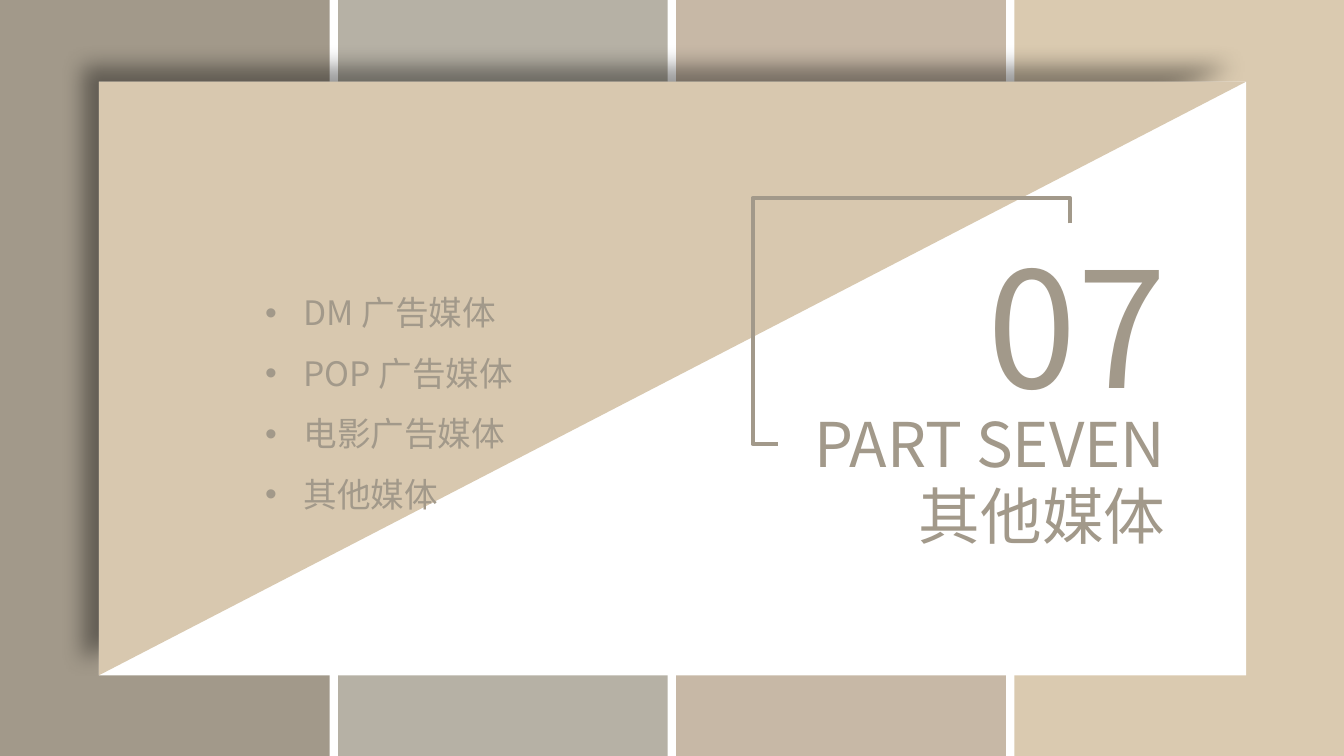
from lxml.etree import SubElement
from pptx import Presentation
from pptx.dml.color import RGBColor
from pptx.enum.shapes import MSO_CONNECTOR, MSO_SHAPE
from pptx.enum.text import MSO_ANCHOR, MSO_AUTO_SIZE, PP_ALIGN
from pptx.oxml import parse_xml
from pptx.oxml.ns import nsdecls, qn
from pptx.util import Inches, Pt

TAUPE = RGBColor(0xA2, 0x99, 0x8A)
SAGE = RGBColor(0xB6, 0xB1, 0xA5)
ROSE = RGBColor(0xC7, 0xB8, 0xA6)
SAND = RGBColor(0xDA, 0xCA, 0xB0)
BEIGE = RGBColor(0xD8, 0xC8, 0xAF)
WHITE = RGBColor(0xFF, 0xFF, 0xFF)
FONT = "Noto Sans CJK SC"
STRIPE_W = 3.27
CARD = (0.98, 0.81, 11.38, 5.89)
MEDIA = ["DM 广告媒体", "POP 广告媒体", "电影广告媒体", "其他媒体"]


def add_filled(s, kind, box, color):
    sp = s.shapes.add_shape(kind, *map(Inches, box))
    sp.shadow.inherit = False
    sp.fill.solid()
    sp.fill.fore_color.rgb = color
    sp.line.fill.background()
    return sp


def add_stripes(s, width):
    colors = [TAUPE, SAGE, ROSE, SAND]
    pitch = (width - STRIPE_W) / (len(colors) - 1)
    for i, color in enumerate(colors):
        add_filled(s, MSO_SHAPE.RECTANGLE, (i * pitch, 0, STRIPE_W, 7.5), color)


def add_card(s):
    add_filled(s, MSO_SHAPE.RECTANGLE, CARD, WHITE)
    half = add_filled(s, MSO_SHAPE.ISOSCELES_TRIANGLE, CARD, BEIGE)
    half.adjustments[0] = 1
    half.rotation = 180
    effects = half._element.spPr.find(qn("a:effectLst"))
    effects.append(parse_xml(
        f'<a:outerShdw {nsdecls("a")} blurRad="{Pt(15)}" dist="{Pt(15)}" '
        f'dir="{225 * 60000}" algn="br" rotWithShape="0"><a:srgbClr val="000000">'
        '<a:alpha val="40000"/></a:srgbClr></a:outerShdw>'))


def add_bracket(s):
    """Four-segment elbow line framing the section number."""
    ends = map(Inches, (10.26, 4.76, 8.07, 1.86))
    line = s.shapes.add_connector(MSO_CONNECTOR.ELBOW, *ends)
    line.line.color.rgb = TAUPE
    line.line.width = Pt(3)
    spPr = line._element.spPr
    spPr.find(qn("a:xfrm")).set("rot", str(270 * 60000))
    geom = spPr.find(qn("a:prstGeom"))
    geom.set("prst", "bentConnector4")
    guides = geom.get_or_add_avLst()
    for name, value in (("adj1", -11400), ("adj2", 108600)):
        SubElement(guides, qn("a:gd"), name=name, fmla=f"val {value}")
    SubElement(spPr, qn("a:effectLst"))


def place(sp, box):
    """Position a text shape in front of the others and return its frame."""
    sp.left, sp.top, sp.width, sp.height = map(Inches, box)
    sp._element.getparent().append(sp._element)
    tf = sp.text_frame
    tf.word_wrap = True
    tf.auto_size = MSO_AUTO_SIZE.NONE
    tf.vertical_anchor = MSO_ANCHOR.TOP
    return tf


def add_run(p, text, size):
    r = p.add_run()
    r.text = text
    r.font.size = Pt(size)
    r.font.name = FONT
    r.font.color.rgb = TAUPE
    SubElement(r._r.get_or_add_rPr(), qn("a:ea"), typeface=FONT)


def write_heading(sp, box, text, size):
    p = place(sp, box).paragraphs[0]
    p.alignment = PP_ALIGN.RIGHT
    add_run(p, text, size)


def write_list(sp, box, items):
    tf = place(sp, box)
    for i, item in enumerate(items):
        p = tf.add_paragraph() if i else tf.paragraphs[0]
        p.line_spacing = 1.5
        p.space_before = Pt(0)
        pPr = p._p.get_or_add_pPr()
        pPr.set("marL", str(Inches(0.38)))
        pPr.set("indent", str(Inches(-0.38)))
        SubElement(pPr, qn("a:buFont"), typeface="Arial")
        SubElement(pPr, qn("a:buChar"), char="•")
        add_run(p, item, 24)


def main():
    prs = Presentation()
    prs.slide_width, prs.slide_height = Inches(13.33), Inches(7.5)
    s = prs.slides.add_slide(prs.slide_layouts[1])
    title, body = s.placeholders
    add_stripes(s, 13.33)
    add_card(s)
    number, part = (s.shapes.add_textbox(0, 0, 0, 0) for _ in range(2))
    write_heading(number, (9.56, 2.21, 2.11, 2.04), "07", 115)
    write_heading(part, (7.71, 3.98, 3.95, 0.84), "PART SEVEN", 44)
    write_heading(title, (6.9, 4.69, 4.76, 0.84), "其他媒体", 44)
    add_bracket(s)
    write_list(body, (2.53, 2.65, 4.37, 2.52), MEDIA)
    prs.save("out.pptx")


if __name__ == "__main__":
    main()
